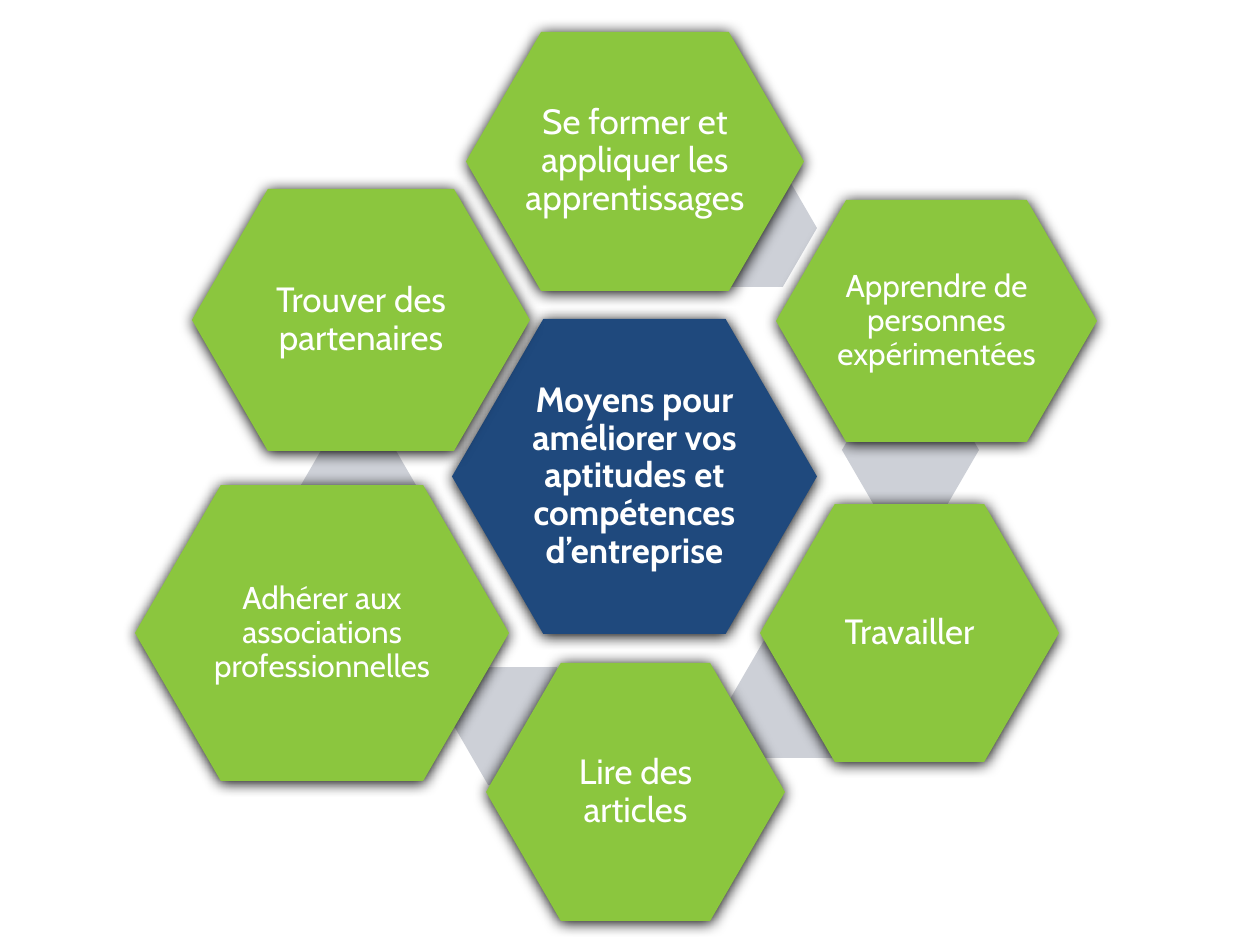
import pptx
import pptx.dml.color
import pptx.enum.shapes
import pptx.enum.text
import pptx.oxml
import pptx.util

PX_PER_INCH = 126
BLUE, GREEN, GREY, WHITE = "1F497D", "8BC63E", "CDD0D7", "FFFFFF"
LINK_SIZE = (137, 118)
TEXT_MARGIN = 0.16  # share of the hexagon kept free on each side

SHADOW = (
    '<a:effectLst xmlns:a="http://schemas.openxmlformats.org/drawingml/2006/main">'
    '<a:outerShdw blurRad="107950" dist="12700" dir="5400000" rotWithShape="0">'
    '<a:srgbClr val="000000"/></a:outerShdw></a:effectLst>'
)


def px(*lengths):
    """Turn pixel lengths into EMU."""
    return [round(n * 914400 / PX_PER_INCH) for n in lengths]


def add_hexagon(box, color):
    hexagon = slide.shapes.add_shape(pptx.enum.shapes.MSO_SHAPE.HEXAGON, *px(*box))
    hexagon.adjustments[0] = 0.29
    hexagon.shadow.inherit = False
    hexagon.fill.solid()
    hexagon.fill.fore_color.rgb = pptx.dml.color.RGBColor.from_string(color)
    hexagon.line.fill.background()
    return hexagon


deck = pptx.Presentation()
deck.slide_width, deck.slide_height = px(1260, 945)
slide = deck.slides.add_slide(deck.slide_layouts[6])

# Wording, hexagon box, text size, corner of the grey link behind it
ideas = [
    ("Moyens pour améliorer vos aptitudes et compétences d’entreprise",
     (452, 319, 365, 315), 20, None),
    ("Se former et appliquer les apprentissages", (466, 32, 338, 259), 20, (680, 169)),
    ("Apprendre de personnes expérimentées", (776, 200, 321, 242), 18, (842, 391)),
    ("Travailler", (760, 504, 299, 258), 20, (730, 640)),
    ("Lire des articles", (486, 663, 299, 258), 20, (454, 667)),
    ("Adhérer aux associations professionnelles", (135, 485, 374, 296), 18, (290, 445)),
    ("Trouver des partenaires", (192, 189, 338, 262), 20, None),
]

for index, (wording, box, size, link) in enumerate(ideas):
    is_center = index == 0
    if link:
        add_hexagon(link + LINK_SIZE, GREY)
    idea = add_hexagon(box, BLUE if is_center else GREEN)
    properties = idea.element.spPr
    properties.remove(properties.find(pptx.oxml.ns.qn("a:effectLst")))
    properties.append(pptx.oxml.parse_xml(SHADOW))

    left, top, width, height = box
    label = slide.shapes.add_textbox(*px(
        left + TEXT_MARGIN * width, top + TEXT_MARGIN * height,
        (1 - 2 * TEXT_MARGIN) * width, (1 - 2 * TEXT_MARGIN) * height))
    frame = label.text_frame
    frame.word_wrap = True
    frame.vertical_anchor = pptx.enum.text.MSO_ANCHOR.MIDDLE
    frame.margin_left, frame.margin_top, frame.margin_right, frame.margin_bottom = px(4, 4, 4, 4)
    paragraph = frame.paragraphs[0]
    paragraph.alignment = pptx.enum.text.PP_ALIGN.CENTER
    paragraph.line_spacing = 0.9
    run = paragraph.add_run()
    run.text = wording
    run.font.name = "Cabin"
    run.font.size = pptx.util.Pt(size)
    run.font.bold = is_center
    run.font.color.rgb = pptx.dml.color.RGBColor.from_string(WHITE)

deck.save("out.pptx")
